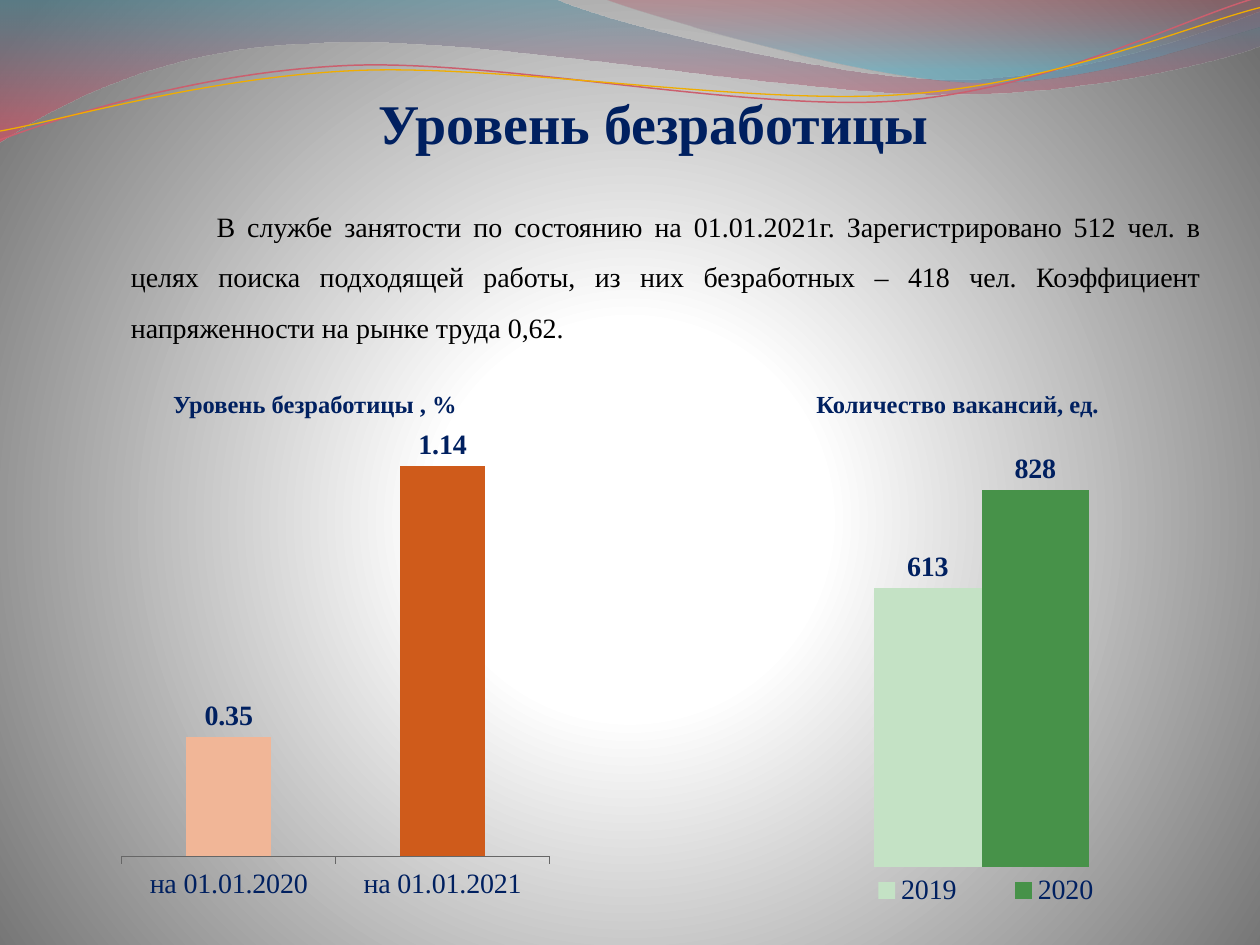
from dataclasses import dataclass
from math import cos, radians, sin
from typing import NamedTuple

from lxml.etree import SubElement
from pptx import Presentation
from pptx.chart.data import CategoryChartData
from pptx.dml.color import RGBColor
from pptx.enum.chart import XL_CHART_TYPE, XL_LABEL_POSITION, XL_LEGEND_POSITION, XL_TICK_MARK
from pptx.enum.text import MSO_ANCHOR, MSO_AUTO_SIZE, PP_ALIGN
from pptx.oxml.ns import qn
from pptx.util import Pt


@dataclass(frozen=True)
class Theme:
    font: str = "Times New Roman"
    navy: str = "002060"
    black: str = "000000"
    axis: str = "666666"
    title_size: int = 32
    body_size: int = 16
    caption_size: int = 14


class Box(NamedTuple):
    left: float
    top: float
    width: float
    height: float

    def lengths(self):
        return [Pt(value) for value in self]


class Stop(NamedTuple):
    position: int
    color: str
    opacity: int = 100


@dataclass(frozen=True)
class Wave:
    box: Box
    start: tuple
    steps: list
    stops: tuple = ()
    color: str = ""
    weight: float = 0
    rotation: float = 0


@dataclass(frozen=True)
class Series:
    name: str
    values: tuple
    colors: tuple


@dataclass(frozen=True)
class ColumnChart:
    box: Box
    categories: tuple
    series: tuple
    maximum: float
    major: float
    plot: Box
    legend: Box = None


THEME = Theme()
WAVES = [
    Wave(Box(-0.7, -0.7, 721.4, 82.1), (0, 0), [
        [(316.8, -0.7)],
        [(342.7, 12.2), (478.1, 45.4), (545.8, 45.4)],
        [(614.2, 45.4), (689.8, 18.7), (720, 6.5)],
        [(720.7, 25.9)],
        [(707.8, 31.7), (626.4, 54.7), (537.1, 54)],
        [(447.8, 54), (275, 20.2), (185, 24.5)],
        [(92.9, 25.9), (33.1, 59.8), (-0.7, 81.4)],
        [(0, 0)],
    ], stops=(Stop(0, "3F8A9F", 45), Stop(100, "EF445B", 55))),
    Wave(Box(344.9, -0.7, 375.1, 50.4), (344.9, -0.7), [
        [(366.5, 7.9), (491, 44.6), (553.7, 46.8)],
        [(616.3, 49.7), (691.9, 23), (720, 15.1)],
        [(720, 0)],
        [(344.9, -0.7)],
    ], stops=(Stop(0, "B84253", 30), Stop(80, "42ABC7", 45))),
    Wave(Box(-1.4, 15.8, 721.4, 51.1), (0, 79.9), [
        [(34.6, 67), (113.8, 41), (199.4, 37.4)],
        [(284.4, 33.8), (427, 64.1), (513.4, 57.6)],
        [(599.8, 51.1), (675.4, 10.8), (718.6, -1.4)],
    ], color="CB5F6E", weight=0.85, rotation=357.3),
    Wave(Box(-1.4, 21.6, 722.2, 41.8), (0, 74.9), [
        [(33.8, 69.1), (118.1, 43.9), (203.8, 40.3)],
        [(290.2, 36.7), (429.8, 60.5), (516.2, 54)],
        [(601.9, 48.2), (677.5, 15.1), (720, 4.3)],
    ], color="F0AD00", weight=0.75, rotation=357.3),
]
CAPTIONS = [
    (Box(36.7, 218.9, 286.6, 24.5), "Уровень безработицы , %"),
    (Box(398.2, 218.9, 298.1, 24.5), "Количество вакансий, ед."),
]
CHARTS = [
    ColumnChart(Box(445, 258.5, 239, 269.3), ("1",),
                (Series("2019", (613,), ("C4E2C5",)), Series("2020", (828,), ("479249",))),
                910, 70, Box(0.035, 0, 0.9, 0.88), Box(0.12, 0.89, 0.75, 0.08)),
    ColumnChart(Box(59, 243.4, 265.7, 276.5), ("на 01.01.2020", "на 01.01.2021"),
                (Series("Series 1", (0.35, 1.14), ("F1B697", "CF5B1B")),),
                1.2, 0.2, Box(0.04, 0.04, 0.92, 0.85)),
]
BODY = ("В службе занятости по состоянию на 01.01.2021г. Зарегистрировано 512 чел. "
        "в целях поиска подходящей работы, из них безработных – 418 чел. "
        "Коэффициент напряженности на рынке труда 0,62.")


def rgb(color: str) -> RGBColor:
    return RGBColor.from_string(color)


def style_font(font, size: float, color: str, bold: bool = False) -> None:
    font.name, font.size, font.bold = THEME.font, Pt(size), bold
    font.color.rgb = rgb(color)


def set_gradient(fill, owner, stops: tuple, circle: tuple = ()) -> None:
    fill.gradient()
    gradient = owner.find(".//" + qn("a:gradFill"))
    for child in list(gradient):
        gradient.remove(child)
    stop_list = SubElement(gradient, qn("a:gsLst"))
    for stop in stops:
        node = SubElement(stop_list, qn("a:gs"), pos=str(stop.position * 1000))
        color = SubElement(node, qn("a:srgbClr"), val=stop.color)
        if stop.opacity < 100:
            SubElement(color, qn("a:alpha"), val=str(stop.opacity * 1000))
    if circle:
        route = SubElement(gradient, qn("a:path"), path="circle")
        sides = {side: str(value * 1000) for side, value in zip("ltrb", circle)}
        SubElement(route, qn("a:fillToRect"), **sides)
    else:
        SubElement(gradient, qn("a:lin"), ang="5400000", scaled="0")


def local_point(wave: Wave, point: tuple) -> tuple:
    box, angle = wave.box, radians(-wave.rotation)
    x = point[0] - box.left - box.width / 2
    y = point[1] - box.top - box.height / 2
    return (Pt(x * cos(angle) - y * sin(angle) + box.width / 2),
            Pt(x * sin(angle) + y * cos(angle) + box.height / 2))


def draw_wave(page, wave: Wave) -> None:
    builder = page.shapes.build_freeform(*local_point(wave, wave.start))
    builder.add_line_segments([local_point(wave, step[-1]) for step in wave.steps],
                              close=bool(wave.stops))
    shape = builder.convert_to_shape()
    shape.left, shape.top, shape.width, shape.height = wave.box.lengths()
    shape.rotation = wave.rotation
    outline = shape.element.find(".//" + qn("a:pathLst"))[0]
    outline.set("w", str(shape.width))
    outline.set("h", str(shape.height))
    moves = [node for node in outline if node.tag != qn("a:close")]
    for node, step in zip(moves, [[wave.start], *wave.steps]):
        if len(step) == 3:
            node.tag = qn("a:cubicBezTo")
        for child in list(node):
            node.remove(child)
        for point in step:
            x, y = local_point(wave, point)
            SubElement(node, qn("a:pt"), x=str(x), y=str(y))
    shape.shadow.inherit = False
    if wave.stops:
        set_gradient(shape.fill, shape.element, wave.stops)
        shape.line.fill.background()
    else:
        shape.fill.background()
        shape.line.color.rgb = rgb(wave.color)
        shape.line.width = Pt(wave.weight)


def write(box, text: str, size: float, color: str, align, bold: bool = False):
    box.text_frame.word_wrap = True
    para = box.text_frame.paragraphs[0]
    para.alignment = align
    span = para.add_run()
    span.text = text
    style_font(span.font, size, color, bold)
    return para


def draw_title(page, text: str) -> None:
    title = page.shapes.title
    title.left, title.top, title.width, title.height = Box(67.7, 17, 612, 72).lengths()
    frame = title.text_frame
    frame.auto_size, frame.vertical_anchor = MSO_AUTO_SIZE.NONE, MSO_ANCHOR.BOTTOM
    frame.margin_left = frame.margin_right = frame.margin_bottom = Pt(0)
    write(title, text, THEME.title_size, THEME.navy, PP_ALIGN.CENTER, True)
    title.element.getparent().append(title.element)


def draw_text(page, area: Box, text: str, size: float, color: str, align, bold: bool = False):
    box = page.shapes.add_textbox(*area.lengths())
    box.text_frame.auto_size = MSO_AUTO_SIZE.SHAPE_TO_FIT_TEXT
    return write(box, text, size, color, align, bold)


def set_layout(owner, area: Box, inner: bool = False) -> None:
    layout = owner.find(qn("c:layout"))
    if layout is None:
        layout = SubElement(owner, qn("c:layout"))
    owner.insert(0 if inner else 1, layout)
    manual = SubElement(layout, qn("c:manualLayout"))
    settings = [("layoutTarget", "inner")] if inner else []
    settings += [("xMode", "edge"), ("yMode", "edge"), *zip("xywh", area)]
    for name, value in settings:
        SubElement(manual, qn(f"c:{name}"), val=str(value))


def draw_chart(page, item: ColumnChart) -> None:
    data = CategoryChartData()
    data.categories = item.categories
    for series in item.series:
        data.add_series(series.name, series.values)
    chart = page.shapes.add_chart(XL_CHART_TYPE.COLUMN_CLUSTERED, *item.box.lengths(), data).chart
    style_font(chart.font, THEME.body_size, THEME.navy)
    chart.has_title = False
    values, categories = chart.value_axis, chart.category_axis
    values.minimum_scale, values.maximum_scale, values.major_unit = 0, item.maximum, item.major
    values.has_major_gridlines = values.visible = False
    categories.visible = item.legend is None
    categories.major_tick_mark = XL_TICK_MARK.OUTSIDE
    categories.format.line.color.rgb = rgb(THEME.axis)
    plot = chart.plots[0]
    plot.gap_width, plot.overlap, plot.vary_by_categories = 150, 0, False
    for drawn, series in zip(plot.series, item.series):
        for index, color in enumerate(series.colors):
            fill = drawn.points[index].format.fill if len(series.colors) > 1 else drawn.format.fill
            fill.solid()
            fill.fore_color.rgb = rgb(color)
        labels = drawn.data_labels
        labels.show_value, labels.position = True, XL_LABEL_POSITION.OUTSIDE_END
        style_font(labels.font, THEME.body_size, THEME.navy, True)
    set_layout(chart.element.find(".//" + qn("c:plotArea")), item.plot, inner=True)
    chart.has_legend = item.legend is not None
    if item.legend:
        chart.legend.position = XL_LEGEND_POSITION.RIGHT
        chart.legend.include_in_layout = False
        style_font(chart.legend.font, THEME.body_size, THEME.navy)
        legend = chart.element.find(".//" + qn("c:legend"))
        set_layout(legend, item.legend)


def main() -> None:
    """Build the unemployment slide."""
    deck = Presentation()
    deck.slide_width, deck.slide_height = Pt(720), Pt(540)
    page = deck.slides.add_slide(deck.slide_layouts[5])
    set_gradient(page.background.fill, page.element,
                 (Stop(0, "FFFFFF"), Stop(25, "FFFFFF"), Stop(100, "707070")),
                 circle=(10, 110, 10, 100))
    for wave in WAVES:
        draw_wave(page, wave)
    draw_title(page, "Уровень безработицы")
    para = draw_text(page, Box(67.7, 106.6, 625.7, 94.3), BODY,
                     THEME.body_size, THEME.black, PP_ALIGN.JUSTIFY)
    para.line_spacing, para.space_before = 1.5, Pt(3.2)
    para._p.get_or_add_pPr().set("indent", str(Pt(49)))
    for area, text in CAPTIONS:
        draw_text(page, area, text, THEME.caption_size, THEME.navy, PP_ALIGN.CENTER, True)
    for item in CHARTS:
        draw_chart(page, item)
    deck.save("out.pptx")


if __name__ == "__main__":
    main()
